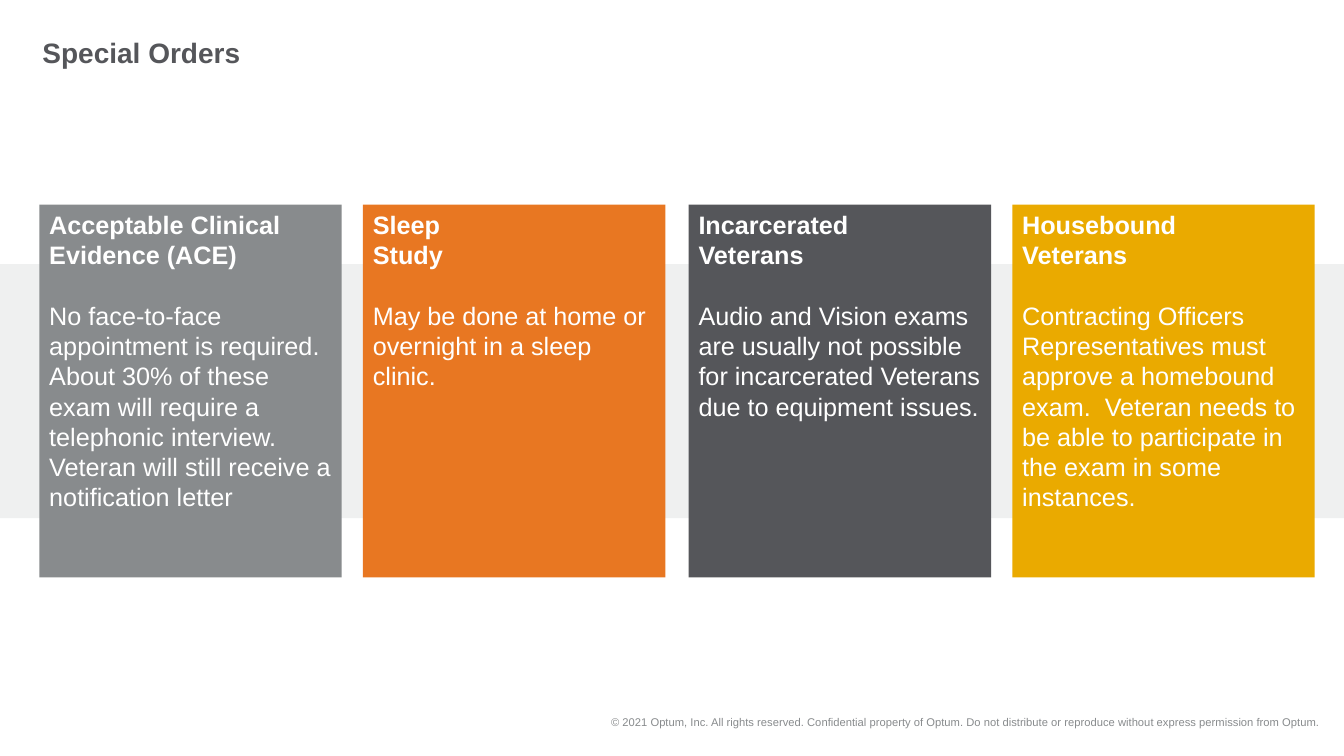
"""Build the Special Orders slide with four coloured cards."""
from pptx import Presentation
from pptx import util as u
from pptx.dml.color import RGBColor
from pptx.enum import shapes, text

COLORS = {
    "band": "EFF0F0", "gray": "888B8D", "orange": "E87722",
    "dark": "55565A", "gold": "EAAA00", "white": "FFFFFF",
}
CARDS = [
    (0.39, "gray", "Acceptable Clinical Evidence (ACE)",
     "No face-to-face appointment is required.  About 30% of these exam will require "
     "a telephonic interview. Veteran will still receive a notification letter"),
    (3.6, "orange", "Sleep\vStudy",
     "May be done at home or overnight in a sleep clinic."),
    (6.83, "dark", "Incarcerated\vVeterans",
     "Audio and Vision exams are usually not possible for incarcerated Veterans "
     "due to equipment issues."),
    (10.04, "gold", "Housebound\vVeterans",
     "Contracting Officers Representatives must approve a homebound exam.  Veteran "
     "needs to be able to participate in the exam in some instances."),
]
LINE = u.Pt(21.6)


def add_block(s, left, top, width, height, color):
    sp = s.shapes.add_shape(
        shapes.MSO_SHAPE.RECTANGLE,
        u.Inches(left), u.Inches(top), u.Inches(width), u.Inches(height))
    sp.shadow.inherit = False
    sp.fill.solid()
    sp.fill.fore_color.rgb = RGBColor.from_string(COLORS[color])
    sp.line.fill.background()
    return sp


def style(p, size, color, bold, align):
    p.alignment = align
    for r in p.runs:
        r.font.name = "Arial"
        r.font.size = u.Pt(size)
        r.font.bold = bold
        r.font.color.rgb = RGBColor.from_string(COLORS[color])


prs = Presentation()
prs.slide_width, prs.slide_height = u.Inches(13.33), u.Inches(7.5)
s = prs.slides.add_slide(prs.slide_layouts[5])

title = s.shapes.title
title.left, title.top = u.Inches(0.42), u.Inches(0.25)
title.width, title.height = u.Inches(12.49), u.Inches(0.44)
title.text_frame.text = "Special Orders"
title.text_frame.vertical_anchor = text.MSO_ANCHOR.BOTTOM
title.text_frame.paragraphs[0].line_spacing = 0.9
style(title.text_frame.paragraphs[0], 20, "dark", True, text.PP_ALIGN.LEFT)

add_block(s, 0, 2.62, 13.33, 2.52, "band")

footer = s.shapes.add_textbox(
    u.Inches(4.16), u.Inches(6.99), u.Inches(8.94), u.Inches(0.34))
footer.text_frame.text = (
    "© 2021 Optum, Inc. All rights reserved. Confidential property of Optum. "
    "Do not distribute or reproduce without express permission from Optum.")
footer.text_frame.word_wrap = True
footer.text_frame.vertical_anchor = text.MSO_ANCHOR.MIDDLE
style(footer.text_frame.paragraphs[0], 8, "gray", False, text.PP_ALIGN.RIGHT)

for tf in (title.text_frame, footer.text_frame):
    tf.margin_left = tf.margin_right = tf.margin_top = tf.margin_bottom = 0

for left, color, heading, body in CARDS:
    tf = add_block(s, left, 2.03, 3, 3.7, color).text_frame
    tf.word_wrap = True
    tf.vertical_anchor = text.MSO_ANCHOR.TOP
    tf.text = heading
    p = tf.add_paragraph()
    p.text = body
    p.space_before = LINE
    for p, bold in zip(tf.paragraphs, (True, False)):
        p.line_spacing = LINE
        style(p, 18, "white", bold, text.PP_ALIGN.LEFT)

prs.save("out.pptx")
